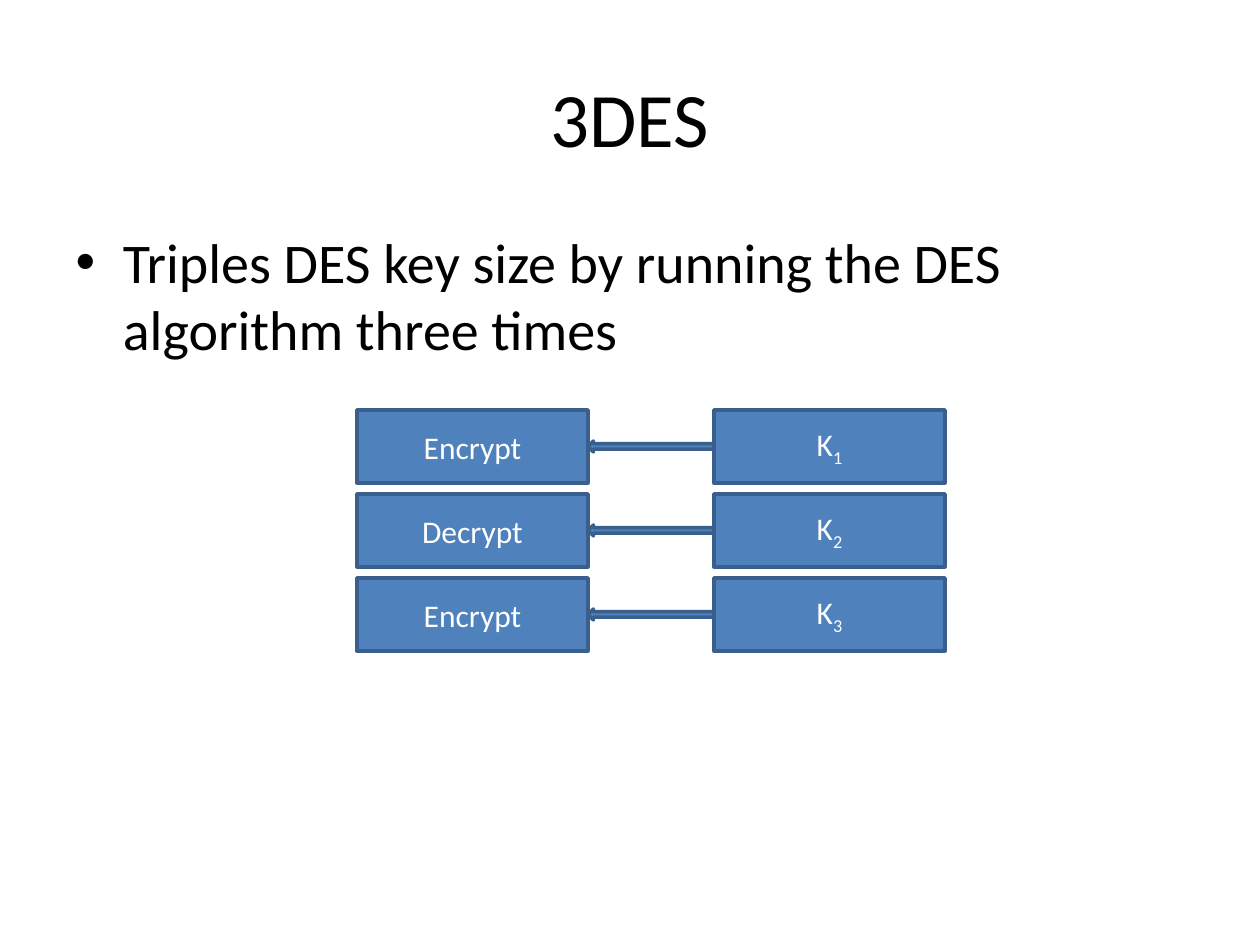
from pptx import Presentation
from pptx.dml.color import RGBColor
from pptx.enum import shapes, text
from pptx.util import Emu, Pt

TITLE = "3DES"
BULLET = "Triples DES key size by running the DES algorithm three times"
STAGES = [("Encrypt", "1"), ("Decrypt", "2"), ("Encrypt", "3")]  # operation, key number

FONT = "Calibri"
BLACK = RGBColor(0x00, 0x00, 0x00)
WHITE = RGBColor(0xFF, 0xFF, 0xFF)
BLUE = RGBColor(0x4F, 0x81, 0xBD)
DARK_BLUE = RGBColor(0x3A, 0x5F, 0x8C)

PX = 914400 / 126
SLIDE_SIZE = (1260, 945)
TITLE_BOX = (63, 38, 1134, 157)
BODY_BOX = (63, 221, 1134, 624)
STAGE_LEFT, STAGE_TOP, STAGE_PITCH = 357, 410, 84
BOX_WIDTH, BOX_HEIGHT = 231, 73
ARROW_WIDTH, ARROW_HEIGHT = 126, 11


def px(value):
    return Emu(round(value * PX))


def add_run(paragraph, words, size, color):
    run = paragraph.add_run()
    run.text = words
    run.font.name = FONT
    run.font.size = Pt(size)
    run.font.color.rgb = color
    return run


def fill_placeholder(placeholder, box, words, size):
    placeholder.left, placeholder.top, placeholder.width, placeholder.height = map(px, box)
    paragraph = placeholder.text_frame.paragraphs[0]
    add_run(paragraph, words, size, BLACK)
    return paragraph


def add_blue_shape(slide, kind, *box):
    shape = slide.shapes.add_shape(kind, *map(px, box))
    shape.shadow.inherit = False
    shape.fill.solid()
    shape.fill.fore_color.rgb = BLUE
    shape.line.color.rgb = DARK_BLUE
    shape.line.width = Pt(2)
    return shape


def add_box(slide, left, top, label, subscript=""):
    shape = add_blue_shape(slide, shapes.MSO_SHAPE.RECTANGLE, left, top, BOX_WIDTH, BOX_HEIGHT)
    shape.text_frame.vertical_anchor = text.MSO_ANCHOR.MIDDLE
    paragraph = shape.text_frame.paragraphs[0]
    paragraph.alignment = text.PP_ALIGN.CENTER
    add_run(paragraph, label, 18, WHITE)
    if subscript:
        run = add_run(paragraph, subscript, 18, WHITE)
        run._r.get_or_add_rPr().set("baseline", "-25000")


def main():
    presentation = Presentation()
    presentation.slide_width, presentation.slide_height = map(px, SLIDE_SIZE)
    slide = presentation.slides.add_slide(presentation.slide_layouts[1])

    title = fill_placeholder(slide.shapes.title, TITLE_BOX, TITLE, 44)
    title.alignment = text.PP_ALIGN.CENTER
    fill_placeholder(slide.placeholders[1], BODY_BOX, BULLET, 32)

    arrow_left = STAGE_LEFT + BOX_WIDTH
    key_left = arrow_left + ARROW_WIDTH
    for index, (operation, key_number) in enumerate(STAGES):
        top = STAGE_TOP + index * STAGE_PITCH
        arrow_top = top + (BOX_HEIGHT - ARROW_HEIGHT) / 2
        add_box(slide, STAGE_LEFT, top, operation)
        add_box(slide, key_left, top, "K", key_number)
        add_blue_shape(slide, shapes.MSO_SHAPE.LEFT_ARROW,
                       arrow_left, arrow_top, ARROW_WIDTH, ARROW_HEIGHT)

    presentation.save("out.pptx")


if __name__ == "__main__":
    main()
